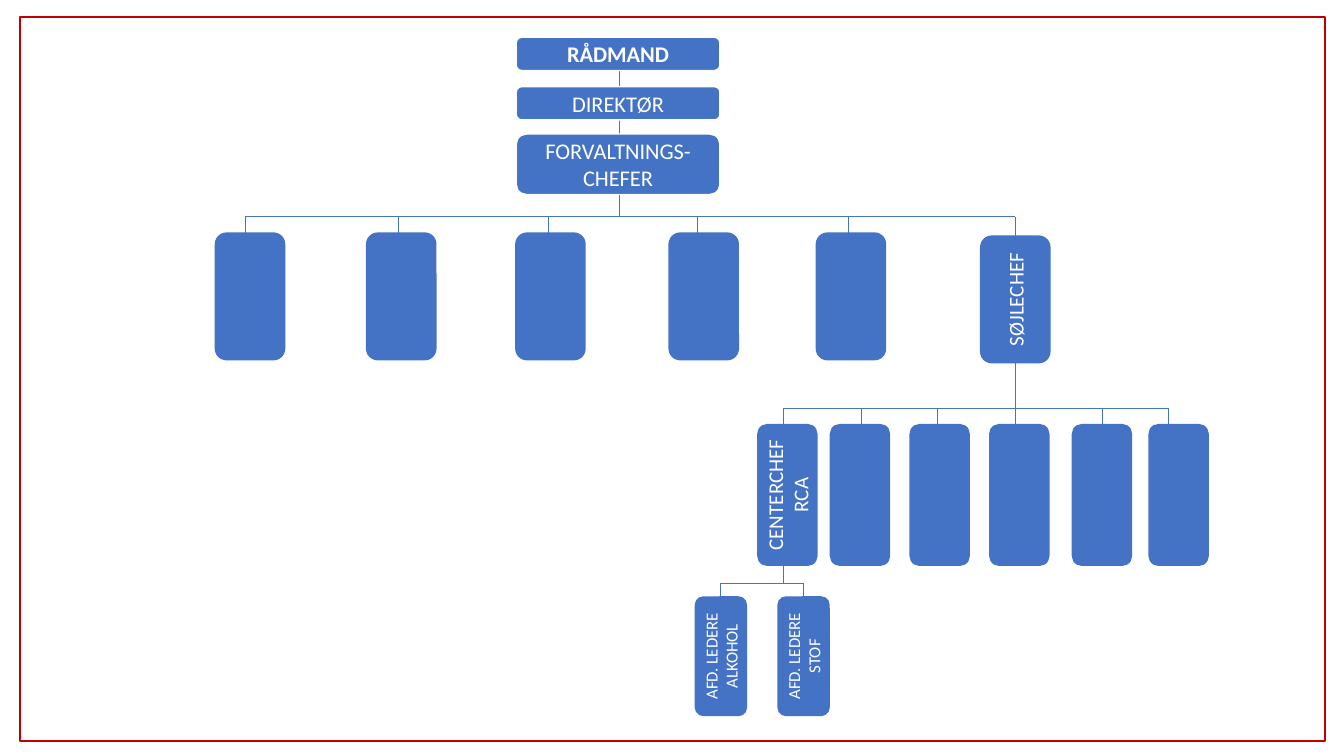
from pptx import Presentation
from pptx import util as u
from pptx.dml.color import RGBColor
from pptx.enum import shapes, text
from pptx.oxml.ns import qn
from lxml import etree

BLUE, WHITE, RED = "4472C4", "FFFFFF", "C00000"

prs = Presentation()
prs.slide_width, prs.slide_height = u.Inches(13.33), u.Inches(7.5)
slide = prs.slides.add_slide(prs.slide_layouts[6])


def branch(x1, y1, x2, y2):
    """Draw one thin straight line of the hierarchy, without shadow."""
    line = slide.shapes.add_connector(
        shapes.MSO_CONNECTOR.STRAIGHT, *map(u.Inches, (x1, y1, x2, y2)))
    line.line.color.rgb = RGBColor.from_string(BLUE)
    line.line.width = u.Pt(0.5)
    etree.SubElement(line._element.spPr, qn("a:effectLst"))


def role(center_x, center_y, width, height, lines=(), size=15, bold=None, rotation=0):
    """Draw a rounded box around its center, with one paragraph per line."""
    box = slide.shapes.add_shape(
        shapes.MSO_SHAPE.ROUNDED_RECTANGLE,
        *map(u.Inches, (center_x - width / 2, center_y - height / 2, width, height)))
    box.rotation = rotation
    box.shadow.inherit = False
    box.fill.solid()
    box.fill.fore_color.rgb = RGBColor.from_string(BLUE)
    if rotation:
        box.line.fill.background()
    else:
        box.line.color.rgb = RGBColor.from_string(WHITE)
        box.line.width = u.Pt(1)
    frame = box.text_frame
    frame.word_wrap = True
    frame.vertical_anchor = text.MSO_ANCHOR.MIDDLE
    for i, words in enumerate(lines):
        paragraph = frame.add_paragraph() if i else frame.paragraphs[0]
        paragraph.alignment = text.PP_ALIGN.CENTER
        run = paragraph.add_run()
        run.text = words
        run.font.name = "Calibri"
        run.font.size = u.Pt(size)
        run.font.bold = bold
        run.font.color.rgb = RGBColor.from_string(WHITE)


# Top management: a vertical chain
branch(6.14, 0.47, 6.14, 2.15)
for center_y, height, name, bold in [
    (0.535, 0.33, "RÅDMAND", True),
    (1.025, 0.33, "DIREKTØR", None),
    (1.63, 0.6, "FORVALTNINGS-CHEFER", None),
]:
    role(6.13, center_y, 2.02, height, [name], 16, bold)

# Lower levels: parent's x and y, rail y, drop length, branch positions,
# box length and width, text size, boxes as (center x, center y, text lines)
levels = [
    (6.14, 1.93, 2.15, 0.55, [2.43, 3.95, 5.44, 6.92, 8.41, 10.07], 1.27, 0.7, 15,
     [(x, 2.94, []) for x in (2.48, 3.98, 5.46, 6.98, 8.44)]
     + [(10.07, 2.97, ["SØJLECHEF"])]),
    (10.07, 3.5, 4.05, 0.4, [7.77, 8.54, 9.3, 10.07, 10.93, 11.59], 1.41, 0.6, 15,
     [(7.81, 4.91, ["CENTERCHEF", "RCA"])]
     + [(x, 4.91, []) for x in (8.53, 9.32, 10.11, 10.93, 11.69)]),
    (7.77, 5.39, 5.79, 0.55, [7.14, 7.97], 1.19, 0.52, 12,
     [(7.15, 6.51, ["AFD. LEDERE ALKOHOL"]), (7.97, 6.51, ["AFD. LEDERE STOF"])]),
]
for parent_x, parent_y, rail, drop, branches, *_ in levels:
    branch(parent_x, parent_y, parent_x, rail)
    branch(branches[0], rail, branches[-1], rail)
    for x in branches:
        branch(x, rail, x, rail + drop)
for *_, length, width, size, boxes in levels:
    for center_x, center_y, lines in boxes:
        role(center_x, center_y, length, width, lines, size, rotation=270)

border = slide.shapes.add_shape(
    shapes.MSO_SHAPE.RECTANGLE, *map(u.Inches, (0.2, 0.17, 12.94, 7.18)))
border.shadow.inherit = False
border.fill.background()
border.line.color.rgb = RGBColor.from_string(RED)
border.line.width = u.Pt(1.5)

prs.save("out.pptx")
